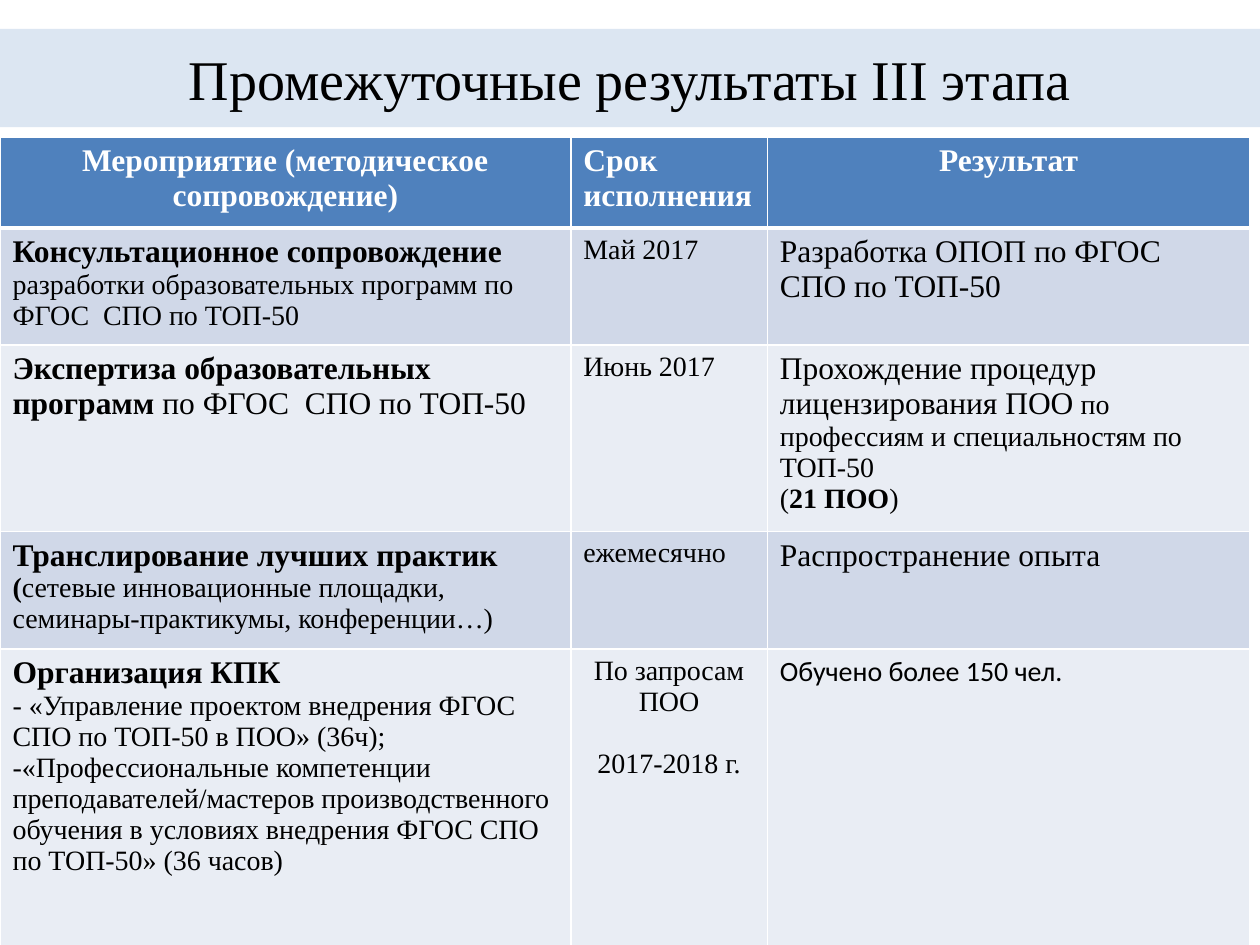
import pptx
import pptx.dml.color
import pptx.enum.shapes
import pptx.enum.text
import pptx.oxml.ns
import pptx.util
from lxml import etree

Inches = pptx.util.Inches
Pt = pptx.util.Pt
RGBColor = pptx.dml.color.RGBColor
CENTER = pptx.enum.text.PP_ALIGN.CENTER
LEFT = pptx.enum.text.PP_ALIGN.LEFT

BLACK = RGBColor(0x00, 0x00, 0x00)
WHITE = RGBColor(0xFF, 0xFF, 0xFF)
BANNER = RGBColor(0xDC, 0xE6, 0xF2)
HEADER = RGBColor(0x4F, 0x81, 0xBD)
BANDS = [RGBColor(0xD0, 0xD8, 0xE8), RGBColor(0xE9, 0xED, 0xF4)]

SERIF = "Times New Roman"
LARGE, SMALL = 18, 16


class SlideBuilder:
    def __init__(self, page):
        self.page = page

    def add_spans(self, para, spans, color=BLACK, align=LEFT):
        para.alignment = align
        for text, size, bold, *font in spans:
            span = para.add_run()
            span.text = text
            span.font.size = Pt(size)
            span.font.bold = bold
            span.font.name = font[0] if font else SERIF
            span.font.color.rgb = color

    def banner(self, text, left, top, width, height):
        box = self.page.shapes.add_shape(
            pptx.enum.shapes.MSO_SHAPE.RECTANGLE,
            Inches(left), Inches(top), Inches(width), Inches(height))
        box.shadow.inherit = False
        box.fill.solid()
        box.fill.fore_color.rgb = BANNER
        box.line.fill.background()
        box.text_frame.word_wrap = True
        box.text_frame.vertical_anchor = pptx.enum.text.MSO_ANCHOR.MIDDLE
        self.add_spans(box.text_frame.paragraphs[0], [(text, 32, False)], align=CENTER)

    def border(self, cell, side, points):
        properties = cell._tc.get_or_add_tcPr()
        name = pptx.oxml.ns.qn
        line = etree.SubElement(properties, name("a:ln" + side), w=str(Pt(points)))
        fill = etree.SubElement(line, name("a:solidFill"))
        etree.SubElement(fill, name("a:srgbClr"), val=str(WHITE))

    def cell(self, cell, paragraphs, row, align):
        for side in "LRTB":
            thick = (row, side) in [(0, "B"), (1, "T")]
            self.border(cell, side, 3 if thick else 1)
        cell.fill.solid()
        cell.fill.fore_color.rgb = BANDS[(row - 1) % 2] if row else HEADER
        frame = cell.text_frame
        for number, spans in enumerate(paragraphs):
            para = frame.add_paragraph() if number else frame.paragraphs[0]
            self.add_spans(para, spans, BLACK if row else WHITE, align)

    def table(self, rows, left, top, widths, heights, centered):
        table = self.page.shapes.add_table(
            len(heights), len(widths), Inches(left), Inches(top),
            Inches(sum(widths)), Inches(sum(heights))).table
        for column, width in zip(table.columns, widths):
            column.width = Inches(width)
        for line, height in zip(table.rows, heights):
            line.height = Inches(height)
        for row, contents in enumerate(rows):
            for column, paragraphs in enumerate(contents):
                align = CENTER if (row, column) in centered else LEFT
                self.cell(table.cell(row, column), paragraphs, row, align)
        return table


ROWS = [
    [
        [[("Мероприятие (методическое сопровождение)", LARGE, True)]],
        [[("Срок исполнения", LARGE, True)]],
        [[("Результат", LARGE, True)]],
    ],
    [
        [[("Консультационное сопровождение ", LARGE, True),
          ("разработки образовательных программ по ФГОС  СПО по ТОП-50", SMALL, False)]],
        [[("Май 2017", SMALL, False)]],
        [[("Разработка ОПОП по ФГОС  СПО по ТОП-50", LARGE, False)]],
    ],
    [
        [[("Экспертиза образовательных программ ", LARGE, True),
          ("по ФГОС  СПО по ТОП-50", LARGE, False)]],
        [[("Июнь 2017", SMALL, False)]],
        [[("Прохождение процедур лицензирования ПОО", LARGE, False),
          (" по профессиям и специальностям по ТОП-50", SMALL, False)],
         [("(", SMALL, False), ("21 ПОО", SMALL, True), (")", SMALL, False)]],
    ],
    [
        [[("Транслирование лучших практик ", LARGE, True),
          ("(", SMALL, True),
          ("сетевые инновационные площадки, семинары-практикумы, конференции…)",
           SMALL, False)]],
        [[("ежемесячно", SMALL, False)]],
        [[("Распространение опыта", LARGE, False)]],
    ],
    [
        [[("Организация КПК", LARGE, True)],
         [("- «Управление проектом внедрения ФГОС СПО по ТОП-50 в ПОО» (36ч);",
           SMALL, False)],
         [("-«Профессиональные компетенции преподавателей/мастеров "
           "производственного обучения в условиях внедрения ФГОС СПО "
           "по ТОП-50» (36 часов)", SMALL, False)]],
        [[("По запросам ПОО", SMALL, False)],
         [("2017-2018 г.", SMALL, False)]],
        [[("Обучено более 150 чел.", SMALL, False, "Calibri")]],
    ],
]


def main():
    deck = pptx.Presentation()
    deck.slide_width = Inches(10)
    deck.slide_height = Inches(7.5)
    builder = SlideBuilder(deck.slides.add_slide(deck.slide_layouts[6]))
    builder.banner("Промежуточные результаты III этапа", 0, 0.23, 10, 0.78)
    table = builder.table(
        ROWS, 0, 1.09,
        widths=[4.53, 1.56, 3.83],
        heights=[0.72, 0.93, 1.48, 0.93, 2.42],
        centered=[(0, 0), (0, 2), (4, 1)])
    period = table.cell(4, 1).text_frame.paragraphs[1]
    period.space_before = Pt(18)
    deck.save("out.pptx")


if __name__ == "__main__":
    main()
